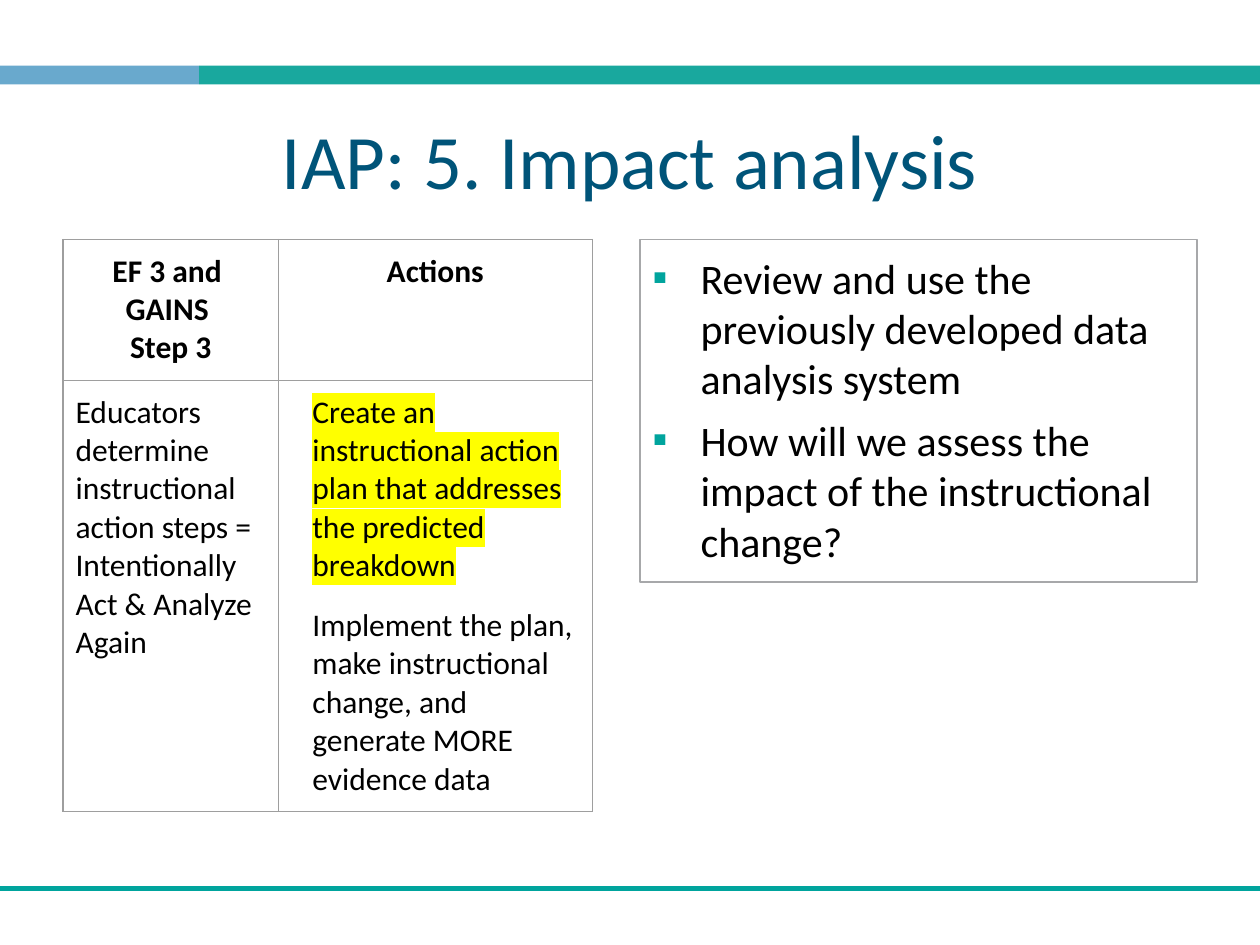
from lxml.etree import SubElement
from pptx import Presentation
from pptx.dml.color import RGBColor as RGB
from pptx.enum.shapes import MSO_CONNECTOR as CONNECTOR, MSO_SHAPE as SHAPE
from pptx.enum.text import MSO_ANCHOR as ANCHOR, PP_ALIGN as ALIGN
from pptx.oxml import parse_xml
from pptx.oxml.ns import nsdecls, qn
from pptx.util import Inches, Pt

COLORS = {
    "blue": "69A9CD", "teal": "19A89E", "accent": "00A49D", "title": "005479",
    "text": "000000", "box": "A7A8AA", "grid": "9E9E9E", "mark": "FFFF00",
}
WIDTH, HEIGHT = 10, 7.5
MARGIN = 0.05 * WIDTH
CONTENT_TOP = 1.9
COLUMNS, ROWS = (1.71, 2.49), (1.12, 3.41)
PADDING = dict.fromkeys(
    ("margin_left", "margin_right", "margin_top", "margin_bottom"), Inches(0.1))
HEADING = {"size": Pt(18), "bold": True}
DETAIL = {"size": Pt(18), "bold": False}
CENTERED = {"alignment": ALIGN.CENTER}
SPACED = {"alignment": ALIGN.LEFT, "space_after": Pt(12)}


def color(name):
    return RGB.from_string(COLORS[name])


def apply(target, values):
    for name, value in values.items():
        setattr(target, name, value)


def place(shape, left, top, width, height):
    apply(shape, {"left": Inches(left), "top": Inches(top),
                  "width": Inches(width), "height": Inches(height)})


def write(para, text, font, layout, ink="text"):
    apply(para, layout)
    span = para.add_run()
    span.text = text
    apply(span.font, {"name": "Calibri", **font})
    span.font.color.rgb = color(ink)
    return span


def paragraphs(frame, texts):
    for index, text in enumerate(texts):
        yield frame.add_paragraph() if index else frame.paragraphs[0], text


def indent(para, left, first=0):
    properties = para._p.get_or_add_pPr()
    properties.set("marL", str(Inches(left)))
    properties.set("indent", str(Inches(first)))
    return properties


def highlight(span):
    fill = span.font._element.find(qn("a:solidFill"))
    fill.addnext(parse_xml(
        f'<a:highlight {nsdecls("a")}><a:srgbClr val="{COLORS["mark"]}"/></a:highlight>'))


def add_bar(slide, left, width, fill):
    bar = slide.shapes.add_shape(
        SHAPE.RECTANGLE, Inches(left), Inches(0.52), Inches(width), Inches(0.15))
    bar.shadow.inherit = False
    bar.fill.solid()
    bar.fill.fore_color.rgb = color(fill)
    bar.line.fill.background()


def add_rule(slide, top):
    rule = slide.shapes.add_connector(
        CONNECTOR.STRAIGHT, 0, Inches(top), Inches(WIDTH), Inches(top))
    rule.line.color.rgb = color("accent")
    rule.line.width = Pt(3)
    SubElement(rule._element.spPr, qn("a:effectLst"))


def fill_title(box, text):
    place(box, MARGIN, 0.66, WIDTH - 2 * MARGIN, 1.2)
    frame = box.text_frame
    apply(frame, {**PADDING, "vertical_anchor": ANCHOR.MIDDLE})
    write(frame.paragraphs[0], text, {"size": Pt(44)}, CENTERED, "title")


def fill_bullets(box, texts):
    place(box, 5.08, CONTENT_TOP, WIDTH - MARGIN - 5.08, 2.72)
    box.line.color.rgb = color("box")
    box.line.width = Pt(1)
    apply(box.text_frame, PADDING)
    for para, text in paragraphs(box.text_frame, texts):
        properties = indent(para, 0.38, -0.38)
        bullet_color = SubElement(properties, qn("a:buClr"))
        SubElement(bullet_color, qn("a:srgbClr"), val=COLORS["accent"])
        SubElement(properties, qn("a:buFont"), typeface="Calibri")
        SubElement(properties, qn("a:buChar"), char="▪")
        gap = Pt(0) if text == texts[0] else Pt(6.4)
        write(para, text, {"size": Pt(24)}, {"space_before": gap})


def format_cell(cell):
    apply(cell, PADDING)
    cell.fill.background()
    properties = cell._tc.get_or_add_tcPr()
    for index, side in enumerate("LRTB"):
        properties.insert(index, parse_xml(
            f'<a:ln{side} {nsdecls("a")} w="{Pt(0.75)}"><a:solidFill>'
            f'<a:srgbClr val="{COLORS["grid"]}"/></a:solidFill></a:ln{side}>'))


def add_steps_table(slide, headings, details):
    table = slide.shapes.add_table(
        len(ROWS), len(COLUMNS), Inches(MARGIN), Inches(CONTENT_TOP),
        Inches(sum(COLUMNS)), Inches(sum(ROWS))).table
    apply(table, {"first_row": False, "horz_banding": False})
    for column, width in zip(table.columns, COLUMNS):
        column.width = Inches(width)
    for row, height in zip(table.rows, ROWS):
        row.height = Inches(height)
    for cell in table.iter_cells():
        format_cell(cell)
    for column, texts in enumerate(headings):
        for para, text in paragraphs(table.cell(0, column).text_frame, texts):
            write(para, text, HEADING, CENTERED)
    for column, texts in enumerate(details):
        for para, text in paragraphs(table.cell(1, column).text_frame, texts):
            indent(para, 0.17 * column)
            span = write(para, text, DETAIL, SPACED)
            if column == 1 and text == texts[0]:
                highlight(span)


def main():
    deck = Presentation()
    deck.slide_width, deck.slide_height = Inches(WIDTH), Inches(HEIGHT)
    slide = deck.slides.add_slide(deck.slide_layouts[1])
    add_bar(slide, 0, 1.58, "blue")
    add_bar(slide, 1.58, WIDTH - 1.58, "teal")
    add_rule(slide, 0.94 * HEIGHT)
    fill_title(slide.shapes.title, "IAP: 5. Impact analysis")
    fill_bullets(slide.placeholders[1], [
        "Review and use the previously developed data analysis system",
        "How will we assess the impact of the instructional change?",
    ])
    add_steps_table(
        slide,
        [["EF 3 and ", "GAINS ", "Step 3"], ["Actions"]],
        [["Educators determine instructional action steps = "
          "Intentionally Act & Analyze Again"],
         ["Create an instructional action plan that addresses the predicted breakdown",
          "Implement the plan, make instructional change, "
          "and generate MORE evidence data"]])
    deck.save("out.pptx")


if __name__ == "__main__":
    main()
